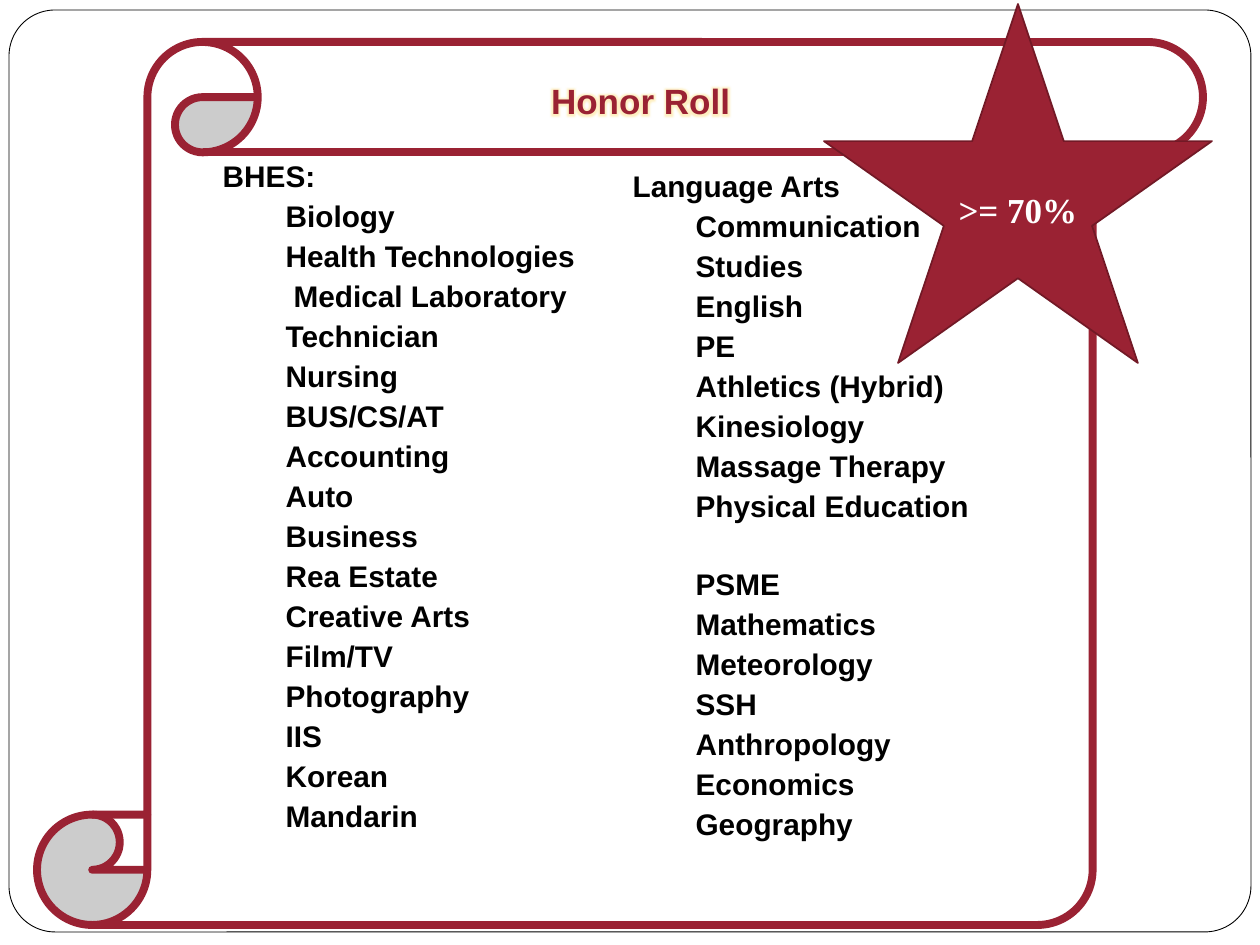
from dataclasses import dataclass

from lxml import etree
from pptx import Presentation
from pptx.dml.color import RGBColor
from pptx.enum.shapes import MSO_SHAPE
from pptx.enum.text import MSO_ANCHOR, MSO_AUTO_SIZE, PP_ALIGN
from pptx.oxml.ns import qn
from pptx.util import Emu, Pt

ROUND, SCROLL, STAR = (
    MSO_SHAPE.ROUNDED_RECTANGLE, MSO_SHAPE.VERTICAL_SCROLL, MSO_SHAPE.STAR_5_POINT)
TOP, MIDDLE = MSO_ANCHOR.TOP, MSO_ANCHOR.MIDDLE
LEFT, CENTER = PP_ALIGN.LEFT, PP_ALIGN.CENTER
FIXED = MSO_AUTO_SIZE.NONE
SCALE = 914400 / 126


@dataclass(frozen=True)
class Theme:
    red: str = "9A2233"
    edge: str = "721926"
    black: str = "000000"
    white: str = "FFFFFF"
    glow: str = "FFD966"
    sans: str = "Arial"
    serif: str = "Times New Roman"
    head: int = 20
    body: int = 17
    pitch: float = 1.12
    gap: float = 21.8


@dataclass(frozen=True)
class Box:
    x: int
    y: int
    w: int
    h: int


@dataclass(frozen=True)
class Form:
    kind: int
    box: Box
    fill: str
    line: str
    width: float


@dataclass(frozen=True)
class Item:
    text: str
    left: int = 63
    first: int = 0
    gap: float = 0


@dataclass(frozen=True)
class Column:
    box: Box
    items: list


THEME = Theme()
FRAME = Form(ROUND, Box(9, 10, 1242, 922), THEME.white, THEME.black, 0.5)
PAPER = Form(SCROLL, Box(37, 42, 1166, 883), THEME.white, THEME.red, 4.5)
BADGE = Form(STAR, Box(824, 4, 388, 359), THEME.red, THEME.edge, 1)
TITLE = Box(346, 73, 599, 55)

COLUMNS = [
    Column(Box(210, 147, 388, 669), [
        Item("BHES:", left=0),
        Item("Biology"),
        Item("Health Technologies"),
        Item("Medical Laboratory Technician", first=8),
        *map(Item, (
            "Nursing", "BUS/CS/AT", "Accounting", "Auto", "Business",
            "Rea Estate", "Creative Arts", "Film/TV", "Photography",
            "IIS", "Korean", "Mandarin")),
    ]),
    Column(Box(620, 157, 388, 764), [
        Item("Language Arts", left=0),
        *map(Item, (
            "Communication Studies", "English", "PE", "Athletics (Hybrid)",
            "Kinesiology", "Massage Therapy", "Physical Education")),
        Item("PSME", gap=THEME.gap),
        *map(Item, (
            "Mathematics", "Meteorology", "SSH", "Anthropology",
            "Economics", "Geography")),
    ]),
]


def px(count: int) -> Emu:
    return Emu(round(count * SCALE))


def place(shape, box: Box) -> None:
    shape.left, shape.top = px(box.x), px(box.y)
    shape.width, shape.height = px(box.w), px(box.h)


def set_frame(shape, anchor):
    frame = shape.text_frame
    frame.word_wrap = True
    frame.auto_size = FIXED
    frame.vertical_anchor = anchor
    return frame


def add_run(para, text: str, size: int, face: str, color: str):
    run = para.add_run()
    run.text = text
    font = run.font
    font.size, font.name, font.bold = Pt(size), face, True
    font.color.rgb = RGBColor.from_string(color)
    return run


def add_form(slide, form: Form):
    box = form.box
    shape = slide.shapes.add_shape(
        form.kind, px(box.x), px(box.y), px(box.w), px(box.h))
    shape.shadow.inherit = False
    shape.fill.solid()
    shape.fill.fore_color.rgb = RGBColor.from_string(form.fill)
    shape.line.color.rgb = RGBColor.from_string(form.line)
    shape.line.width = Pt(form.width)
    return shape


def add_glow(run, color: str) -> None:
    effect = etree.Element(qn("a:effectLst"))
    glow = etree.SubElement(effect, qn("a:glow"), rad="63500")
    tint = etree.SubElement(glow, qn("a:srgbClr"), val=color)
    etree.SubElement(tint, qn("a:alpha"), val="40000")
    run.font._element.find(qn("a:solidFill")).addnext(effect)


def fill_title(shape) -> None:
    place(shape, TITLE)
    para = set_frame(shape, TOP).paragraphs[0]
    para.alignment = CENTER
    run = add_run(para, "Honor Roll ", THEME.head, THEME.sans, THEME.red)
    add_glow(run, THEME.glow)


def fill_list(shape, column: Column) -> None:
    place(shape, column.box)
    frame = set_frame(shape, TOP)
    for index, item in enumerate(column.items):
        para = frame.add_paragraph() if index else frame.paragraphs[0]
        props = para._p.get_or_add_pPr()
        props.set("marL", str(px(item.left)))
        props.set("indent", str(px(item.first)))
        etree.SubElement(props, qn("a:buNone"))
        para.alignment = LEFT
        para.line_spacing = THEME.pitch
        para.space_before = Pt(item.gap)
        add_run(para, item.text, THEME.body, THEME.sans, THEME.black)


def main() -> None:
    deck = Presentation()
    deck.slide_width, deck.slide_height = px(1260), px(945)
    slide = deck.slides.add_slide(deck.slide_layouts[3])
    title, *lists = list(slide.placeholders)

    for form in (FRAME, PAPER):
        shape = add_form(slide, form)
        title._element.addprevious(shape._element)
        if form is FRAME:
            shape.adjustments[0] = 0.05

    fill_title(title)
    for shape, column in zip(lists, COLUMNS):
        fill_list(shape, column)

    star = add_form(slide, BADGE)
    para = set_frame(star, MIDDLE).paragraphs[0]
    para.alignment = CENTER
    add_run(para, ">= 70%", THEME.head, THEME.serif, THEME.white)

    deck.save("out.pptx")


if __name__ == "__main__":
    main()
